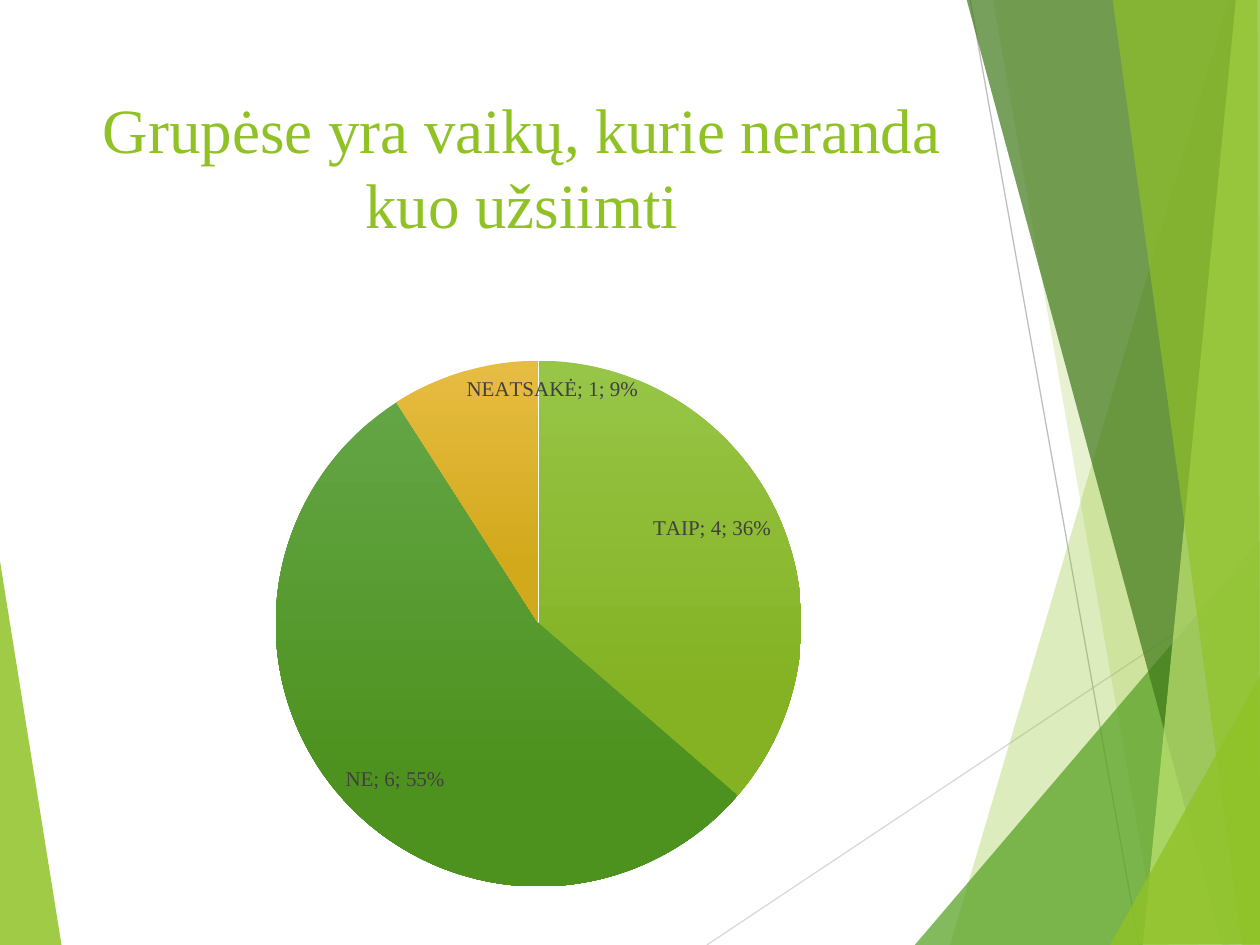
import pptx
import pptx.chart.data
import pptx.dml.color
import pptx.enum.chart
import pptx.enum.shapes
import pptx.enum.text
import pptx.oxml
import pptx.oxml.ns
import pptx.util
from pptx.util import Inches

WIDE, HIGH = 10, 7.5
SERIF = "Times New Roman"
LIME = "90C226"
LEAF = "54A021"

# fill, opacity in percent, corners
LEFT = (LIME, 85, [(-0.01, 4.39), (0.49, 7.51), (-0.01, 7.5)])
RIGHT = [
    (LIME, 30, [(9.75, 0), (7.54, 7.5), (10.02, 7.51), (10.01, 0.01)]),
    (LIME, 20, [(7.88, -0.01), (9.19, 7.5), (10.01, 7.5), (10.01, -0.01)]),
    (LEAF, 72, [(7.26, 7.5), (10, 4.29), (10.01, 7.5)]),
    ("3F7819", 70, [(7.67, -0.01), (9.7, 7.5), (10.01, 7.49), (10.01, -0.01)]),
    ("C0E474", 70, [(9.81, -0.01), (9.07, 7.5), (10.01, 7.5), (10, -0.01)]),
    (LIME, 65, [(8.83, -0.01), (9.86, 7.5), (10, 7.5), (9.98, -0.01)]),
    (LIME, 80, [(8.81, 7.5), (10.01, 5.35), (10.01, 7.49)]),
]
LINES = [("D9D9D9", (5.61, 7.5), (10.01, 4.57)),
         ("BFBFBF", (7.7, 0), (9.04, 7.5))]

VOTES = {"TAIP": 4, "NE": 6, "NEATSAKĖ": 1}
SHADES = [("97C547", "84B223"), ("63A545", "4D921E"), ("E7BC43", "D2A91B")]


def rgb(code):
    return pptx.dml.color.RGBColor.from_string(code)


def style(item, **values):
    for name, value in values.items():
        setattr(item, name, value)


def paint(font, name, size, code):
    style(font, name=name, size=pptx.util.Pt(size))
    font.color.rgb = rgb(code)


def add_tag(parent, name, **values):
    tag = pptx.oxml.parse_xml(
        f'<{name} xmlns:a="http://schemas.openxmlformats.org/drawingml/2006/main"'
        ' xmlns:c="http://schemas.openxmlformats.org/drawingml/2006/chart"/>')
    for key, value in values.items():
        tag.set(key, str(value))
    parent.append(tag)
    return tag


def add_facet(slide, code, alpha, points):
    (x, y), *rest = points
    pen = slide.shapes.build_freeform(Inches(x), Inches(y))
    pen.add_line_segments([(Inches(x), Inches(y)) for x, y in rest])
    shape = pen.convert_to_shape()
    shape.shadow.inherit = False
    shape.fill.solid()
    shape.fill.fore_color.rgb = rgb(code)
    shape.line.fill.background()
    color = shape.fill._xPr.solidFill[0]
    add_tag(color, "a:alpha", val=alpha * 1000)


def add_line(slide, code, start, end):
    line = slide.shapes.add_connector(
        pptx.enum.shapes.MSO_CONNECTOR.STRAIGHT,
        *(Inches(n) for n in start + end))
    line.line.color.rgb = rgb(code)
    line.line.width = pptx.util.Pt(0.75)
    add_tag(line._element.spPr, "a:effectLst")


def add_decor(slide):
    add_facet(slide, *LEFT)
    for line in LINES:
        add_line(slide, *line)
    for facet in RIGHT:
        add_facet(slide, *facet)


def add_title(slide, box, text):
    frame = slide.shapes.add_textbox(*map(Inches, box)).text_frame
    style(frame, word_wrap=True,
          vertical_anchor=pptx.enum.text.MSO_ANCHOR.TOP)
    para = frame.paragraphs[0]
    style(para, text=text, alignment=pptx.enum.text.PP_ALIGN.CENTER,
          line_spacing=pptx.util.Pt(43))
    paint(para.runs[0].font, SERIF, 36, LIME)


def set_plot(chart, wide, high):
    """Center the plot in the chart at the given shares of its size."""
    area = chart._chartSpace.chart.plotArea
    for old in area.findall(pptx.oxml.ns.qn("c:layout")):
        area.remove(old)
    layout = add_tag(area, "c:layout")
    area.insert(0, layout)
    manual = add_tag(layout, "c:manualLayout")
    values = {"layoutTarget": "inner", "xMode": "edge", "yMode": "edge",
              "x": round((1 - wide) / 2, 4), "y": round((1 - high) / 2, 4),
              "w": wide, "h": high}
    for name, value in values.items():
        add_tag(manual, f"c:{name}", val=value)


def add_pie(slide, box):
    kinds = pptx.enum.chart
    data = pptx.chart.data.CategoryChartData()
    data.categories = list(VOTES)
    data.add_series("Series 1", list(VOTES.values()))
    chart = slide.shapes.add_chart(
        kinds.XL_CHART_TYPE.PIE, *map(Inches, box), data).chart
    style(chart, has_title=False, has_legend=False)
    paint(chart.font, "Cabin", 10, "000000")
    set_plot(chart, 0.63, 0.94)

    plot = chart.plots[0]
    plot.vary_by_categories = True
    series = plot.series[0]
    for i, shades in enumerate(SHADES):
        fill = series.points[i].format.fill
        fill.gradient()
        fill.gradient_angle = 270
        for stop, spot, code in zip(fill.gradient_stops, (0, 0.78), shades):
            stop.position = spot
            stop.color.rgb = rgb(code)

    labels = series.data_labels
    style(labels, show_value=True, show_percentage=True,
          show_category_name=True,
          position=kinds.XL_LABEL_POSITION.INSIDE_END)
    paint(labels.font, SERIF, 12, "404040")


def main():
    deck = pptx.Presentation()
    style(deck, slide_width=Inches(WIDE), slide_height=Inches(HIGH))
    slide = deck.slides.add_slide(deck.slide_layouts[6])
    add_decor(slide)
    add_title(slide, (0.67, 0.67, 6.94, 1.44),
              "Grupėse yra vaikų, kurie neranda kuo užsiimti")
    add_pie(slide, (0.94, 2.73, 6.67, 4.44))
    deck.save("out.pptx")


if __name__ == "__main__":
    main()
